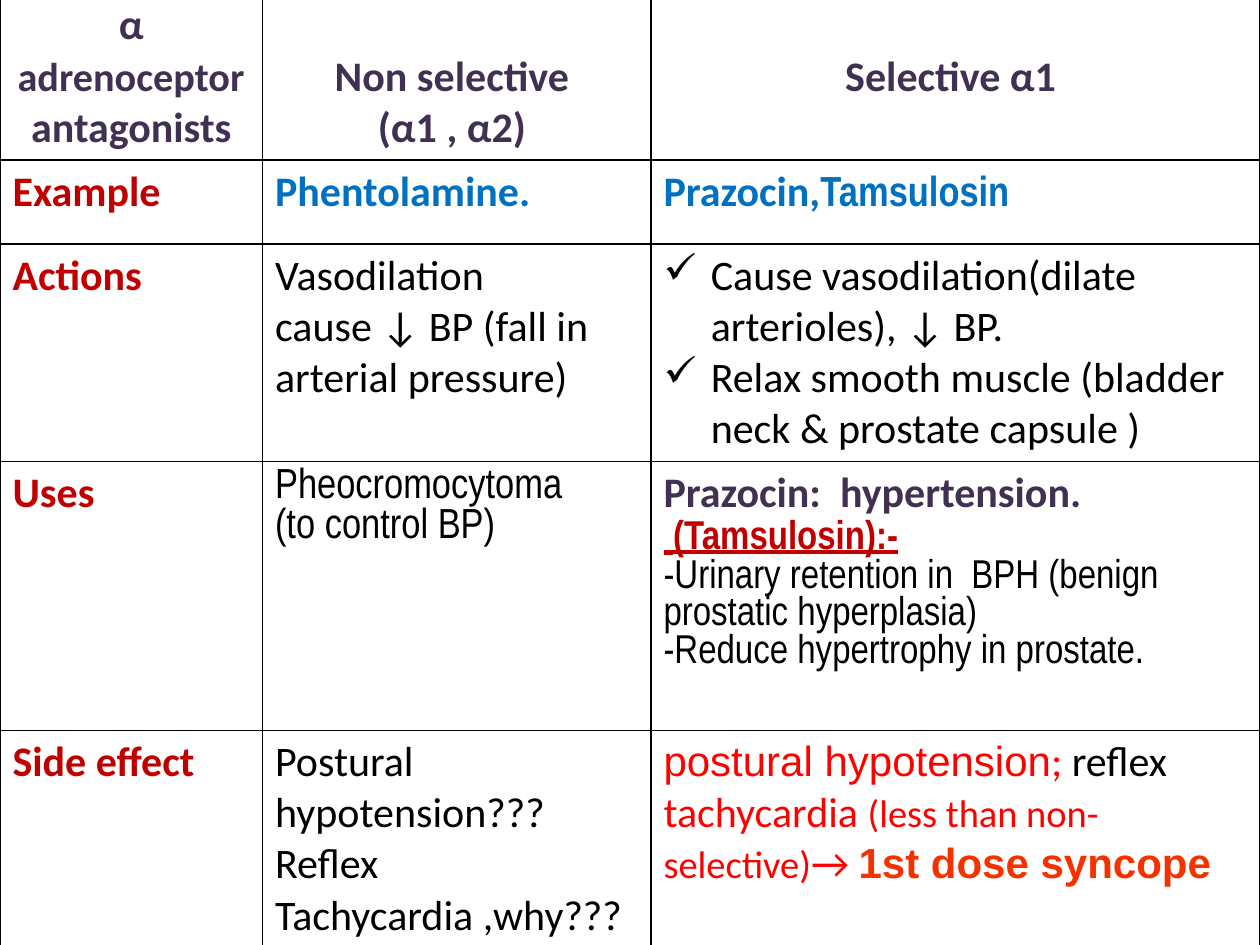
from lxml import etree
from pptx import Presentation
from pptx import util as u
from pptx.dml.color import RGBColor
from pptx.enum import text
from pptx.oxml import ns

Pt = u.Pt
COLORS = {
    "black": "000000", "purple": "403152", "crimson": "C00000",
    "blue": "0070C0", "red": "FF0000", "orange": "F63100",
}
NARROW = "Arial Narrow"
COLUMN_WIDTHS = [150, 222, 348]
ROW_HEIGHTS = [64, 48, 121, 153.5, 121]
CHECK_INDENT = 27


def run(words, color="black", bold=False, size=24, font="Calibri", underline=False):
    return words, color, bold, size, font, underline


def add_child(parent, tag, **attributes):
    return etree.SubElement(parent, ns.qn(tag), attributes)


# Each cell is a list of paragraphs, each paragraph a list of runs.
header = [
    [[run("α ", "purple", True), run("adrenoceptor", "purple", True, 23),
      run(" antagonists", "purple", True)]],
    [[run("Non selective ", "purple", True)], [run("(α1 , α2) ", "purple", True)]],
    [[run("Selective α1 ", "purple", True)]],
]
example = [
    [[run("Example", "crimson", True)]],
    [[run("Phentolamine.", "blue", True)]],
    [[run("Prazocin,", "blue", True), run("Tamsulosin", "blue", True, font=NARROW)]],
]
actions = [
    [[run("Actions", "crimson", True)]],
    [[run("Vasodilation")], [run("cause ↓ BP (fall in arterial pressure)")]],
    [[run("Cause vasodilation(dilate arterioles), ↓ BP.")],
     [run("Relax smooth muscle (bladder neck & prostate capsule )")]],
]
uses = [
    [[run("Uses", "crimson", True)]],
    [[run("Pheocromocytoma", font=NARROW)], [run("(to control BP)", font=NARROW)]],
    [[run("Prazocin:  hypertension.", "purple", True)],
     [run(" ", "crimson", True, 24, NARROW, True),
      run("(Tamsulosin):-", "crimson", True, 23, NARROW, True)],
     [run("-Urinary retention in  BPH (benign prostatic hyperplasia)", size=23, font=NARROW)],
     [run("-Reduce hypertrophy in prostate.", size=23, font=NARROW)]],
]
side_effects = [
    [[run("Side effect", "crimson", True)]],
    [[run("Postural hypotension???")], [run("Reflex Tachycardia ,why???")]],
    [[run("postural hypotension", "red", font="Arial"), run("; ", "red"),
      run("reflex "), run("tachycardia ", "red"),
      run("(less than non-selective)", "red", size=22), run("→ ", "red"),
      run("1st dose syncope", "orange", True, font="Arial")]],
]
rows = [header, example, actions, uses, side_effects]
header_anchors = [text.MSO_ANCHOR.TOP, text.MSO_ANCHOR.BOTTOM, text.MSO_ANCHOR.MIDDLE]

deck = Presentation()
deck.slide_width, deck.slide_height = Pt(720), Pt(540)
page = deck.slides.add_slide(deck.slide_layouts[6])
table = page.shapes.add_table(len(rows), len(COLUMN_WIDTHS), Pt(0), Pt(-3.6),
                              Pt(sum(COLUMN_WIDTHS)), Pt(sum(ROW_HEIGHTS))).table
table.first_row = table.horz_banding = False
for column, width in zip(table.columns, COLUMN_WIDTHS):
    column.width = Pt(width)
for row, height in zip(table.rows, ROW_HEIGHTS):
    row.height = Pt(height)

for row_index, row in enumerate(rows):
    for column_index, paragraphs in enumerate(row):
        cell = table.cell(row_index, column_index)
        properties = cell._tc.get_or_add_tcPr()
        for side in ("a:lnL", "a:lnR", "a:lnT", "a:lnB"):
            border = add_child(properties, side, w=str(Pt(1)))
            add_child(add_child(border, "a:solidFill"), "a:srgbClr", val=COLORS["black"])
        cell.fill.background()
        if row is header:
            cell.vertical_anchor = header_anchors[column_index]

        for index, runs in enumerate(paragraphs):
            frame = cell.text_frame
            para = frame.add_paragraph() if index else frame.paragraphs[0]
            para.alignment = text.PP_ALIGN.CENTER if row is header else text.PP_ALIGN.LEFT
            if row is actions and column_index == 2:
                bullet = para._p.get_or_add_pPr()
                bullet.set("marL", str(Pt(CHECK_INDENT)))
                bullet.set("indent", str(-Pt(CHECK_INDENT)))
                add_child(bullet, "a:buChar", char="✓")
            for words, color, bold, size, font, underline in runs:
                span = para.add_run()
                span.text = words
                span.font.name, span.font.size = font, Pt(size)
                span.font.bold, span.font.underline = bold, underline
                span.font.color.rgb = RGBColor.from_string(COLORS[color])

deck.save("out.pptx")
